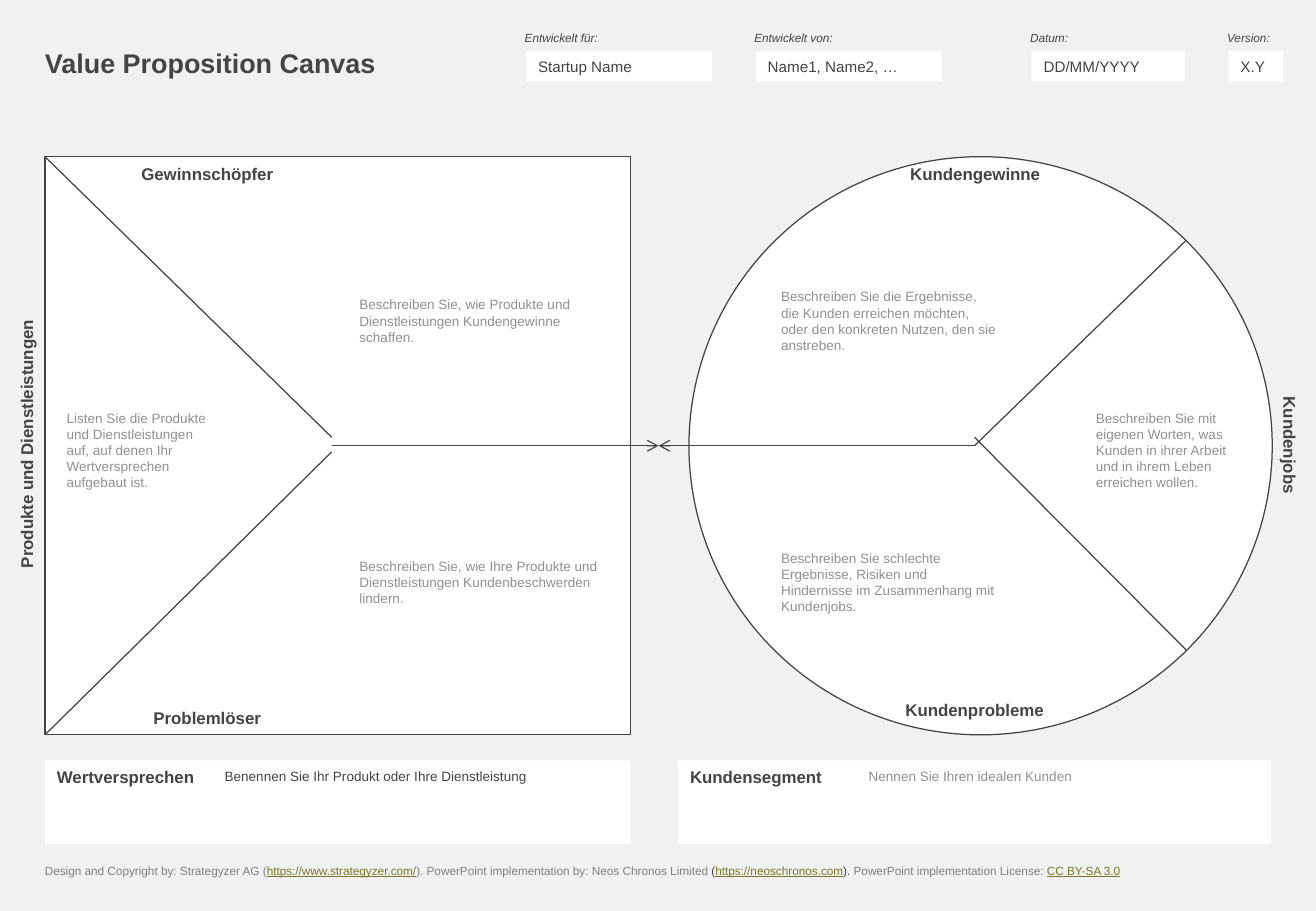
from dataclasses import dataclass

from lxml import etree
from pptx import Presentation
from pptx.dml.color import RGBColor
from pptx.enum.shapes import MSO_CONNECTOR as CONNECTOR, MSO_SHAPE as SHAPE
from pptx.enum.text import MSO_ANCHOR as ANCHOR, MSO_AUTO_SIZE as AUTO, PP_ALIGN as ALIGN
from pptx.oxml.ns import qn
from pptx.util import Inches, Pt


@dataclass(frozen=True)
class Theme:
    font: str = "Arial"
    paper: str = "F1F1F1"
    panel: str = "FFFFFF"
    ink: str = "444444"
    hint: str = "909090"
    credit: str = "808080"
    link: str = "787828"
    title: int = 16
    heading: int = 10
    field: int = 9
    body: int = 8
    small: int = 7
    stroke: float = 0.75


THEME = Theme()


def rgb(value):
    return RGBColor.from_string(value)


def inches(*lengths):
    return [Inches(length) for length in lengths]


def write(shape, text, size=THEME.body, color=THEME.ink, bold=False, italic=False,
          align=ALIGN.LEFT, anchor=ANCHOR.TOP):
    """Fill a shape with one paragraph; text is a string or (text, color) runs."""
    frame = shape.text_frame
    frame.word_wrap = True
    frame.auto_size = AUTO.NONE
    frame.vertical_anchor = anchor
    paragraph = frame.paragraphs[0]
    paragraph.alignment = align
    paragraph.space_before = Pt(0)
    for words, run_color in [(text, color)] if isinstance(text, str) else text:
        run = paragraph.add_run()
        run.text = words
        font = run.font
        font.name, font.size = THEME.font, Pt(size)
        font.bold, font.italic = bold, italic
        font.underline = run_color == THEME.link
        font.color.rgb = rgb(run_color)


def label(slide, box, text, rotation=0, **style):
    text_box = slide.shapes.add_textbox(*inches(*box))
    text_box.rotation = rotation
    write(text_box, text, **style)


def panel(slide, box, kind=SHAPE.RECTANGLE, outlined=False):
    area = slide.shapes.add_shape(kind, *inches(*box))
    area.shadow.inherit = False
    area.fill.solid()
    area.fill.fore_color.rgb = rgb(THEME.panel)
    if outlined:
        area.line.color.rgb = rgb(THEME.ink)
        area.line.width = Pt(THEME.stroke)
    else:
        area.line.fill.background()
    return area


def divider(slide, start, end, arrow=False):
    line = slide.shapes.add_connector(CONNECTOR.STRAIGHT, *inches(*start, *end))
    line.line.color.rgb = rgb(THEME.ink)
    line.line.width = Pt(THEME.stroke)
    if arrow:
        etree.SubElement(line.line._get_or_add_ln(), qn("a:tailEnd"), type="arrow")
    etree.SubElement(line._element.spPr, qn("a:effectLst"))


def add_header(slide):
    title = slide.shapes.title
    title.left, title.top, title.width, title.height = inches(0.27, 0.33, 3.23, 0.37)
    write(title, "Value Proposition Canvas", size=THEME.title, bold=True)

    fields = [
        (4.33, 1.53, "Entwickelt für:", "Startup Name"),
        (6.22, 1.53, "Entwickelt von:", "Name1, Name2, …"),
        (8.49, 1.26, "Datum:", "DD/MM/YYYY"),
        (10.11, 0.45, "Version:", "X.Y"),
    ]
    for left, width, caption, value in fields:
        label(slide, (left - 0.11, 0.2, width + 0.2, 0.22), caption,
              size=THEME.small, italic=True)
        write(panel(slide, (left, 0.42, width, 0.25)), value, size=THEME.field)


def add_canvas(slide):
    # Value map and customer profile
    panel(slide, (0.37, 1.29, 4.82, 4.76), outlined=True)
    panel(slide, (5.67, 1.29, 4.8, 4.76), SHAPE.OVAL, outlined=True)

    # Sector borders
    divider(slide, (0.37, 1.29), (2.73, 3.6))
    divider(slide, (0.37, 6.05), (2.73, 3.72))
    divider(slide, (8.02, 3.67), (9.76, 1.98))
    divider(slide, (8.02, 3.6), (9.76, 5.35))

    # Arrows that meet between the two halves
    meeting_point = (5.42, 3.67)
    for start_x in (2.73, 8.02):
        divider(slide, (start_x, 3.67), meeting_point, arrow=True)

    headings = [
        ((0.75, 1.3, 1.91, 0.27), "Gewinnschöpfer", 0),
        ((0.75, 5.78, 1.91, 0.27), "Problemlöser", 0),
        ((-0.94, 3.52, 2.32, 0.27), "Produkte und Dienstleistungen", 270),
        ((7.36, 1.3, 1.33, 0.27), "Kundengewinne", 0),
        ((7.28, 5.71, 1.48, 0.27), "Kundenprobleme", 0),
        ((9.94, 3.53, 1.35, 0.27), "Kundenjobs", 90),
    ]
    for box, text, rotation in headings:
        label(slide, box, text, rotation, size=THEME.heading, bold=True, align=ALIGN.CENTER)

    hints = [
        ((2.86, 1.78, 2.17, 1.72),
         "Beschreiben Sie, wie Produkte und Dienstleistungen Kundengewinne schaffen."),
        ((0.45, 2.58, 1.39, 2.25),
         "Listen Sie die Produkte und Dienstleistungen auf, auf denen Ihr "
         "Wertversprechen aufgebaut ist."),
        ((2.86, 3.83, 2.17, 1.92),
         "Beschreiben Sie, wie Ihre Produkte und Dienstleistungen "
         "Kundenbeschwerden lindern."),
        ((6.33, 1.78, 1.99, 1.72),
         "Beschreiben Sie die Ergebnisse, die Kunden erreichen möchten, "
         "oder den konkreten Nutzen, den sie anstreben."),
        ((6.33, 3.83, 1.99, 1.92),
         "Beschreiben Sie schlechte Ergebnisse, Risiken und Hindernisse "
         "im Zusammenhang mit Kundenjobs."),
        ((8.92, 2.58, 1.42, 2.25),
         "Beschreiben Sie mit eigenen Worten, was Kunden in ihrer Arbeit "
         "und in ihrem Leben erreichen wollen."),
    ]
    for box, text in hints:
        label(slide, box, text, color=THEME.hint, anchor=ANCHOR.MIDDLE)


def add_summaries(slide):
    summaries = [
        (0.37, 4.82, "Wertversprechen", 1.75,
         "Benennen Sie Ihr Produkt oder Ihre Dienstleistung", THEME.ink),
        (5.58, 4.88, "Kundensegment", 7.05,
         "Nennen Sie Ihren idealen Kunden", THEME.hint),
    ]
    for left, width, heading, text_left, text, color in summaries:
        panel(slide, (left, 6.26, width, 0.69))
        label(slide, (left, 6.26, 1.91, 0.27), heading, size=THEME.heading, bold=True)
        label(slide, (text_left, 6.27, 3.42, 0.67), text, color=color)


def add_copyright(slide):
    label(slide, (0.27, 7.06, 10.29, 0.34), [
        ("Design and Copyright by: Strategyzer AG (", THEME.credit),
        ("https://www.strategyzer.com/", THEME.link),
        ("). PowerPoint implementation by: Neos Chronos Limited ", THEME.credit),
        ("(", THEME.ink),
        ("https://neoschronos.com", THEME.link),
        ("). ", THEME.ink),
        ("PowerPoint implementation License: ", THEME.credit),
        ("CC BY-SA 3.0", THEME.link),
    ], size=THEME.small)


def main():
    deck = Presentation()
    deck.slide_width, deck.slide_height = inches(10.83, 7.5)
    slide = deck.slides.add_slide(deck.slide_layouts[5])
    slide.background.fill.solid()
    slide.background.fill.fore_color.rgb = rgb(THEME.paper)
    add_header(slide)
    add_canvas(slide)
    add_summaries(slide)
    add_copyright(slide)
    deck.save("out.pptx")


if __name__ == "__main__":
    main()
